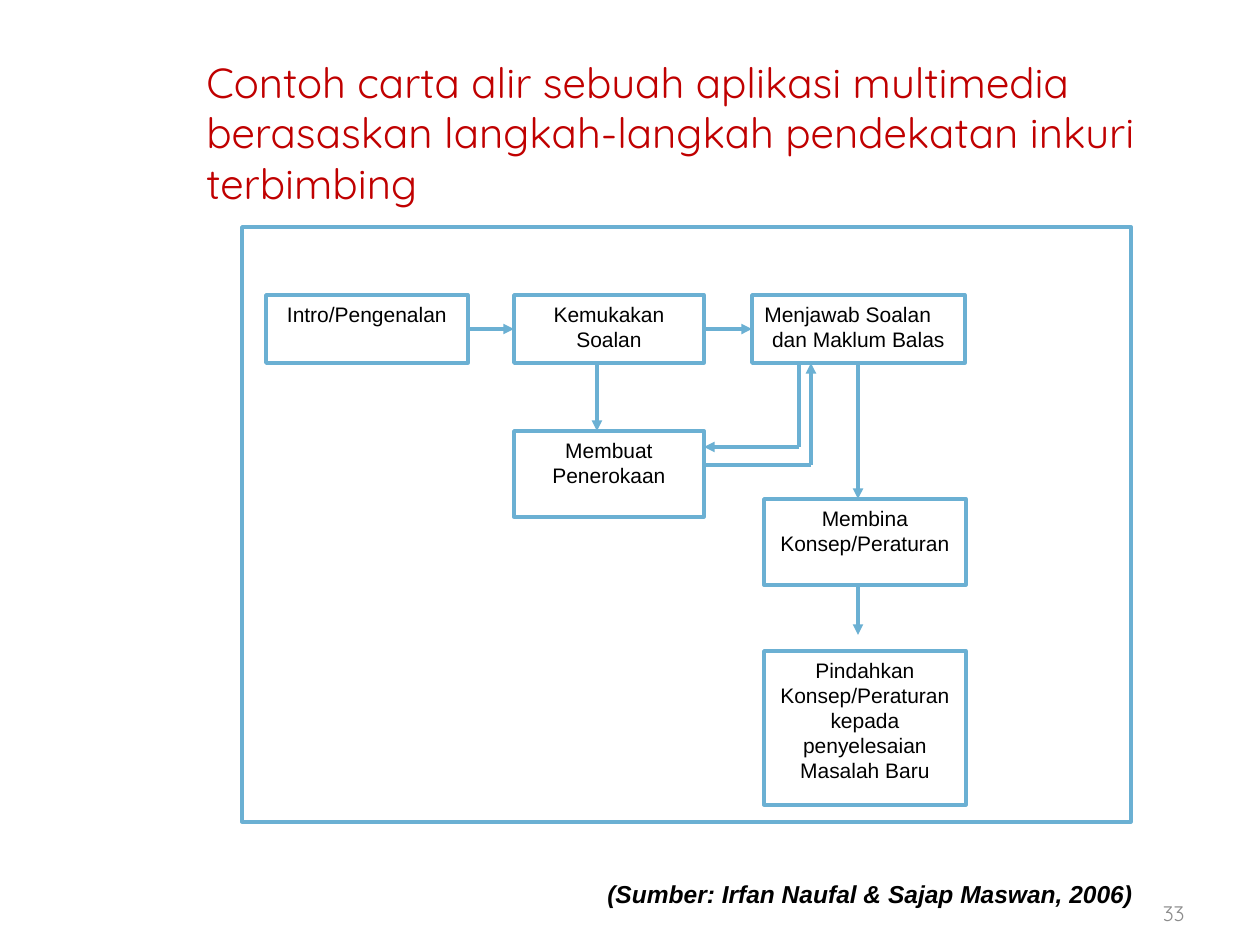
import pptx
import pptx.dml.color
import pptx.enum.shapes
import pptx.enum.text
import pptx.oxml.ns
import pptx.util
from lxml import etree

PX = 914400 / 126
COLORS = {"title": "C00000", "line": "6BB0D3", "box": "FFFFFF",
          "text": "000000", "number": "8C8C8C"}
ALIGN = pptx.enum.text.PP_ALIGN
ANCHOR = pptx.enum.text.MSO_ANCHOR
TOP, LEFT, BOTTOM, RIGHT = range(4)
LINE_WIDTH = 2

TITLE = ("Contoh carta alir sebuah aplikasi multimedia berasaskan "
         "langkah-langkah pendekatan inkuri terbimbing")
FRAME = (242, 227, 889, 595)
# step: (left, top, width, height), paragraphs with their alignment
STEPS = {
    "intro": ((266, 295, 202, 68), [("Intro/Pengenalan", ALIGN.CENTER)]),
    "question": ((514, 295, 190, 68), [("Kemukakan Soalan", ALIGN.CENTER)]),
    "answer": ((752, 295, 213, 68), [("Menjawab Soalan", ALIGN.LEFT),
                                     ("dan Maklum Balas", ALIGN.CENTER)]),
    "explore": ((514, 431, 190, 86), [("Membuat Penerokaan", ALIGN.CENTER)]),
    "concept": ((764, 499, 202, 86),
                [("Membina Konsep/Peraturan", ALIGN.CENTER)]),
    "transfer": ((764, 651, 202, 154),
                 [("Pindahkan Konsep/Peraturan kepada penyelesaian "
                   "Masalah Baru", ALIGN.CENTER)]),
}
JOINED_STEPS = [("intro", "question"), ("question", "answer")]
# each route is a chain of points whose last leg has the arrowhead
ROUTES = [
    [(597, 363), (597, 431)],
    [(799, 363), (799, 447), (704, 447)],
    [(704, 465), (811, 465), (811, 363)],
    [(858, 363), (858, 499)],
    [(858, 584), (858, 635)],
]


def px(*lengths):
    return [pptx.util.Emu(round(length * PX)) for length in lengths]


def rgb(name):
    return pptx.dml.color.RGBColor.from_string(COLORS[name])


def write(frame, paragraphs, color, **font_format):
    for index, (text, alignment) in enumerate(paragraphs):
        paragraph = frame.paragraphs[0] if index == 0 else frame.add_paragraph()
        paragraph.alignment = alignment
        run = paragraph.add_run()
        run.text = text
        run.font.color.rgb = rgb(color)
        for attribute, value in font_format.items():
            setattr(run.font, attribute, value)


def add_label(slide, box, text, alignment, color, frame_format, **font_format):
    frame = slide.shapes.add_textbox(*px(*box)).text_frame
    for attribute, value in frame_format.items():
        setattr(frame, attribute, value)
    write(frame, [(text, alignment)], color, **font_format)


def style_line(line):
    line.color.rgb = rgb("line")
    line.width = pptx.util.Pt(LINE_WIDTH)


def add_box(shapes, box, paragraphs=()):
    rectangle = shapes.add_shape(
        pptx.enum.shapes.MSO_SHAPE.RECTANGLE, *px(*box))
    rectangle.shadow.inherit = False
    rectangle.fill.solid()
    rectangle.fill.fore_color.rgb = rgb("box")
    style_line(rectangle.line)
    rectangle.text_frame.word_wrap = True
    rectangle.text_frame.vertical_anchor = ANCHOR.TOP
    write(rectangle.text_frame, paragraphs, "text",
          name="Arial", size=pptx.util.Pt(12))
    return rectangle


def add_line(shapes, start, end, arrow):
    connector = shapes.add_connector(
        pptx.enum.shapes.MSO_CONNECTOR.STRAIGHT, *px(*start, *end))
    style_line(connector.line)
    if arrow:
        etree.SubElement(connector.line._get_or_add_ln(),
                         pptx.oxml.ns.qn("a:tailEnd"), type="triangle")
    etree.SubElement(connector._element.spPr, pptx.oxml.ns.qn("a:effectLst"))
    return connector


def join_steps(shapes, source, target):
    """Run an arrow from the right side of one step to the left of the next."""
    connector = add_line(shapes, (0, 0), (1, 1), arrow=True)
    connector.begin_connect(source, RIGHT)
    connector.end_connect(target, LEFT)


def add_route(shapes, points):
    for start, end in zip(points, points[1:]):
        add_line(shapes, start, end, arrow=end == points[-1])


def add_flowchart(slide):
    shapes = slide.shapes.add_group_shape().shapes
    add_box(shapes, FRAME)
    steps = {name: add_box(shapes, *step) for name, step in STEPS.items()}
    for source, target in JOINED_STEPS:
        join_steps(shapes, steps[source], steps[target])
    for points in ROUTES:
        add_route(shapes, points)


def main():
    presentation = pptx.Presentation()
    presentation.slide_width, presentation.slide_height = px(1260, 945)
    slide = presentation.slides.add_slide(presentation.slide_layouts[6])
    add_label(slide, (194, 50, 1061, 185), TITLE, ALIGN.LEFT, "title",
              {"word_wrap": True}, name="Quicksand", size=pptx.util.Pt(24))
    add_label(slide, (1128, 891, 69, 44), "33", ALIGN.RIGHT, "number",
              {"word_wrap": True, "vertical_anchor": ANCHOR.MIDDLE},
              name="Quicksand", size=pptx.util.Pt(12))
    add_label(slide, (595, 873, 553, 43),
              "(Sumber: Irfan Naufal & Sajap Maswan, 2006)",
              ALIGN.LEFT, "text",
              {"word_wrap": False,
               "auto_size": pptx.enum.text.MSO_AUTO_SIZE.SHAPE_TO_FIT_TEXT},
              name="Arial", size=pptx.util.Pt(14), bold=True, italic=True)
    add_flowchart(slide)
    presentation.save("out.pptx")


if __name__ == "__main__":
    main()
